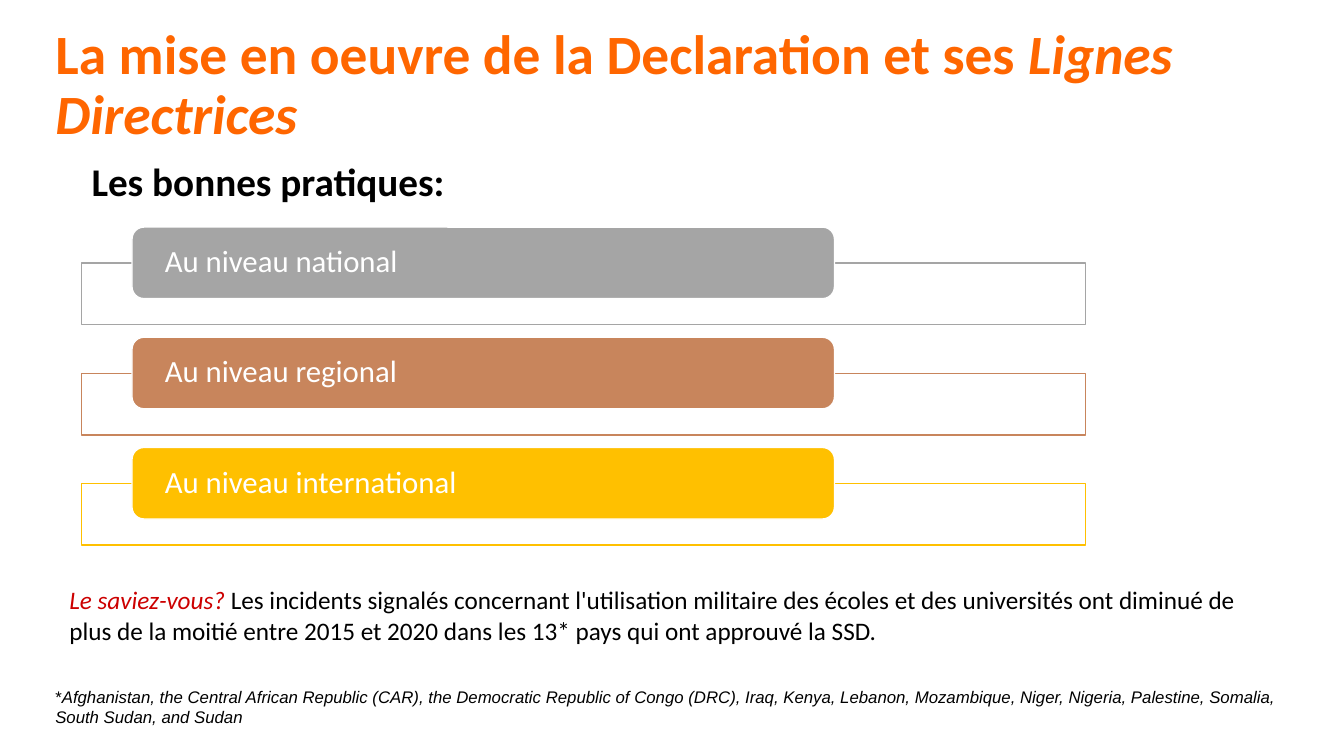
from lxml import etree
from pptx import Presentation
from pptx import util as u
from pptx.dml.color import RGBColor
from pptx.enum import shapes, text
from pptx.oxml import ns

Pt = u.Pt
COLOURS = {
    "title": "FF6600", "accent": "CC0000", "black": "000000", "white": "FFFFFF",
    "national": "A5A5A5", "regional": "C8855C", "international": "FFC000",
}


def add_spans(para, spans, colour, **formats):
    """Each span is (wording, format values that differ from the paragraph's)."""
    for wording, changes in spans:
        span = para.add_run()
        span.text = wording
        values = {"name": "Calibri", **formats, **changes}
        span.font.color.rgb = RGBColor.from_string(COLOURS[values.pop("colour", colour)])
        for key, value in values.items():
            setattr(span.font, key, value)


def add_bar(kind, left, top, width, height, fill, line):
    bar = page.shapes.add_shape(kind, Pt(left), Pt(top), Pt(width), Pt(height))
    bar.shadow.inherit = False
    bar.fill.solid()
    bar.fill.fore_color.rgb = RGBColor.from_string(COLOURS[fill])
    bar.line.color.rgb = RGBColor.from_string(COLOURS[line])
    bar.line.width = Pt(1)
    return bar


deck = Presentation()
deck.slide_width, deck.slide_height = Pt(960), Pt(540)
page = deck.slides.add_slide(deck.slide_layouts[5])

# Title
title = page.shapes.title
title.left, title.top, title.width, title.height = Pt(32.4), Pt(31.7), Pt(894.2), Pt(60.5)
title.text_frame.word_wrap = True
title.text_frame.auto_size = text.MSO_AUTO_SIZE.NONE
title.text_frame.vertical_anchor = text.MSO_ANCHOR.MIDDLE
para = title.text_frame.paragraphs[0]
para.alignment = text.PP_ALIGN.LEFT
para.line_spacing = 0.9
add_spans(para, [("La mise en oeuvre de la Declaration et ses ", {}),
                 ("Lignes Directrices", {"italic": True})],
          "title", size=Pt(39.6), bold=True)

# Levels: an outlined band with a coloured label over its upper edge
for row, level in enumerate(["national", "regional", "international"]):
    shift = row * 78.7
    band = add_bar(shapes.MSO_SHAPE.RECTANGLE, 58.3, 188 + shift, 717.1, 43.9, "white", level)
    fill_colour = band.fill._xPr.find(".//" + ns.qn("a:srgbClr"))
    etree.SubElement(fill_colour, ns.qn("a:alpha"), val="90000")

    label = add_bar(shapes.MSO_SHAPE.ROUNDED_RECTANGLE, 94.3, 162.2 + shift, 501.8, 51.1,
                    level, "white")
    frame = label.text_frame
    frame.word_wrap = True
    frame.vertical_anchor = text.MSO_ANCHOR.MIDDLE
    frame.margin_left = frame.margin_right = Pt(21)
    frame.margin_top = frame.margin_bottom = 0
    para = frame.paragraphs[0]
    para.alignment = text.PP_ALIGN.LEFT
    para.line_spacing = 0.9
    add_spans(para, [(f"Au niveau {level}", {})], "white", size=Pt(22))

# Heading, fact and footnote
notes = [
    ((58.3, 108.7, 391.7, 41), {"size": Pt(28), "bold": True},
     [("Les bonnes pratiques:", {})]),
    ((42.5, 414, 875.5, 51), {"size": Pt(18)},
     [("Le saviez-vous? ", {"italic": True, "colour": "accent"}),
      ("Les incidents signalés concernant l'utilisation militaire des écoles et des "
       "universités ont diminué de plus de la moitié entre 2015 et 2020 dans les 13* pays "
       "qui ont approuvé la SSD.", {})]),
    ((32.4, 486.7, 894.2, 36), {"size": Pt(12), "name": "Arial"},
     [("*", {}),
      ("Afghanistan, the Central African Republic (CAR), the Democratic Republic of Congo "
       "(DRC), Iraq, Kenya, Lebanon, Mozambique, Niger, Nigeria, Palestine, Somalia, "
       "South Sudan, and Sudan", {"italic": True})]),
]
for place, formats, spans in notes:
    box = page.shapes.add_textbox(*map(Pt, place))
    box.text_frame.word_wrap = True
    box.text_frame.auto_size = text.MSO_AUTO_SIZE.SHAPE_TO_FIT_TEXT
    add_spans(box.text_frame.paragraphs[0], spans, "black", **formats)

deck.save("out.pptx")
